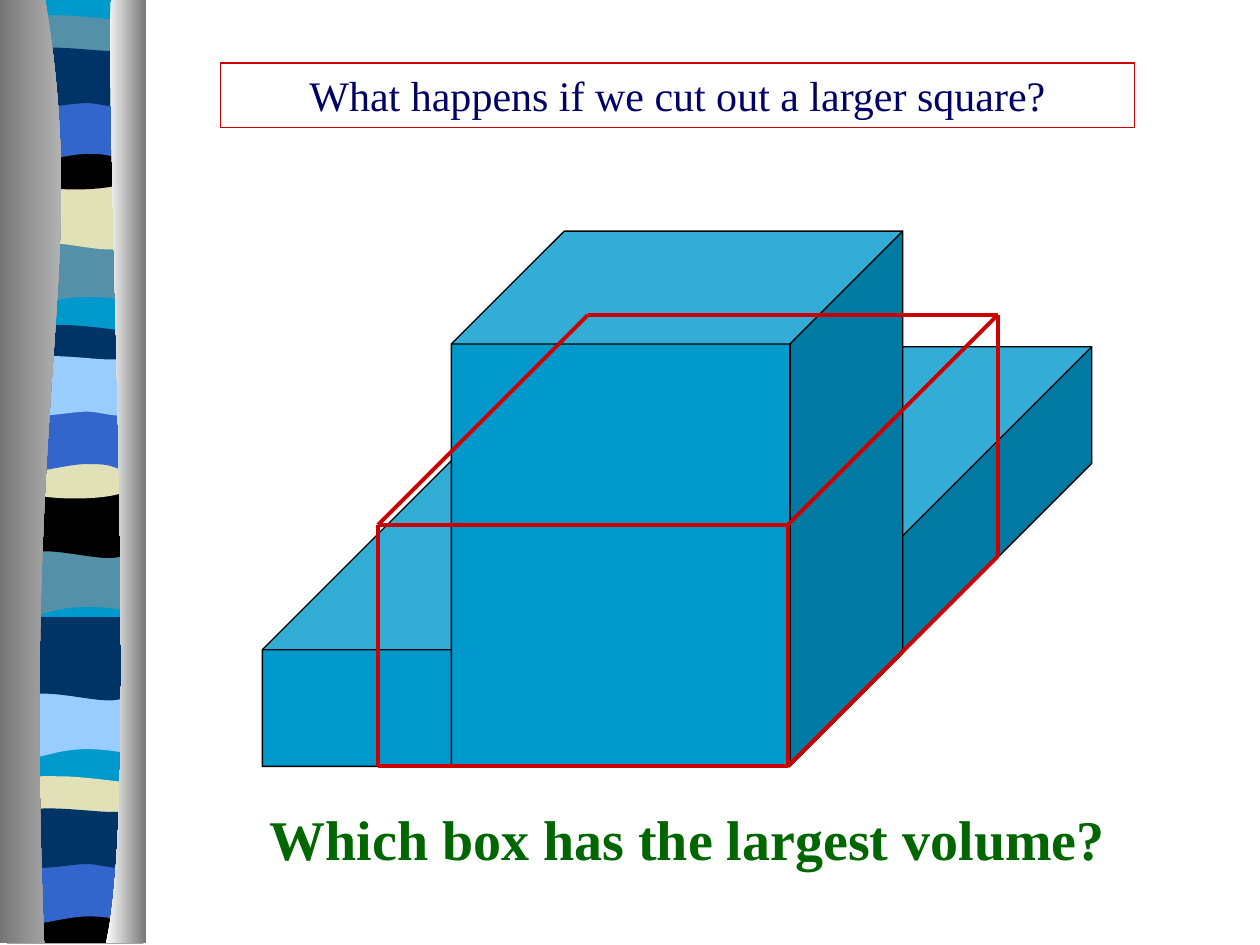
import pptx
import pptx.util
import pptx.dml.color
import pptx.enum.shapes
import pptx.enum.text
import lxml.etree
from pptx.util import Cm

COLORS = {
    "cyan": "0099CC", "steel": "5490A8", "sand": "E1E1B7", "black": "000000",
    "royal": "3366CC", "navy": "003366", "sky": "99CCFF", "grey": "767676",
    "silver": "D0D0D0", "white": "FFFFFF", "red": "CC0000",
    "title": "000066", "question": "006600",
}
FONT = "Times New Roman"

# Outlines in cm: pairs are straight steps, sixes are Bezier curves
BOWL_TOP = (1.68, 0.13, 2.16, 0, 2.75, 0)
WAVES = {
    "dip": [(2.75, 0), (2.75, 1.2), (0.84, 0.99, 0.46, 1.4, 0, 1.2), (0, 0)],
    "swell": [(2.75, 0), (2.75, 1.2), (2.29, 1.4, 0.84, 1.05, 0, 1.2), (0, 0)],
    "lens": [(2.75, 0.12), (2.75, 0.73), (2.29, 0.84, 0.46, 0.84, 0, 0.73),
             (0, 0.12), (0.18, 0, 0.58, 0.03, 1.04, 0.03),
             (1.5, 0.03, 2.39, 0.1, 2.75, 0.12)],
    "bowl": [(2.75, 0), (2.75, 0.82), (2.29, 0.97, 0.46, 0.97, 0, 0.82),
             (0, 0), BOWL_TOP],
    "arch": [(2.75, 0), (2.75, 1.2), (2.31, 1.07, 2.13, 1.07, 1.68, 1.07),
             (1.22, 1.07, 0.41, 1.2, 0, 1.2), (0, 0)],
    "ribbon": [(2.75, 0.12), (2.75, 0.91), (2.57, 1.04, 2.13, 0.91, 1.68, 0.91),
               (1.22, 0.91, 0.28, 1.04, 0, 0.91), (0, 0.12),
               (0.38, 0, 1.85, 0.12, 2.31, 0.12), (2.75, 0.12)],
    "foot": [(2.75, 0), (2.75, 0.94), (0, 0.94), (0, 0), BOWL_TOP],
    "column": [(2.75, 0), (2.75, 18.98), (0, 18.98), (0, 0)],
    "left edge": [(0.91, 0), (1.83, 5.49, 0.43, 7.52, 0.89, 19.02),
                  (0, 19.02), (0, 0)],
    "right edge": [(2.24, 0), (2.13, 3.18, 2.82, 16.41, 2.13, 19.02),
                   (2.95, 19.02), (2.95, 0)],
}
# Wave, top in cm and colour, from back to front
BANDS = [
    ("column", 0, "cyan"),
    ("dip", 4.7, "steel"), ("swell", 3.58, "sand"), ("lens", 0.41, "steel"),
    ("bowl", 2.74, "black"), ("arch", 1.88, "royal"), ("ribbon", 1.04, "navy"),
    ("dip", 10.95, "steel"), ("swell", 9.8, "black"), ("lens", 6.65, "navy"),
    ("bowl", 8.97, "sand"), ("arch", 8.13, "royal"), ("ribbon", 7.26, "sky"),
    ("dip", 13.82, "sky"), ("swell", 12.67, "navy"), ("lens", 15.75, "sand"),
    ("foot", 18.08, "black"), ("arch", 17.25, "royal"), ("ribbon", 16.38, "navy"),
]
UNSTRETCHED = ("column", "foot")


def rgb(name):
    return pptx.dml.color.RGBColor.from_string(COLORS[name])


def add_outline(slide, wave, left, top):
    outline = WAVES[wave]
    points = [(Cm(left + x), Cm(top + y)) for step in outline
              for x, y in zip(step[::2], step[1::2])]
    builder = slide.shapes.build_freeform(*points[0])
    builder.add_line_segments(points[1:], close=True)
    shape = builder.convert_to_shape()
    # Join the three points of each curve into one Bezier segment
    segments = iter(shape.element.findall(".//" + pptx.oxml.ns.qn("a:lnTo")))
    for step in outline[1:]:
        segment = next(segments)
        if len(step) == 6:
            segment.tag = pptx.oxml.ns.qn("a:cubicBezTo")
            for _ in range(2):
                extra = next(segments)
                segment.append(extra[0])
                extra.getparent().remove(extra)
    shape.shadow.inherit = False
    shape.line.fill.background()
    return shape


def stretch(shape, across, down):
    """Scale a shape about its centre."""
    width, height = int(shape.width * across), int(shape.height * down)
    shape.left += (shape.width - width) // 2
    shape.top += (shape.height - height) // 2
    shape.width, shape.height = width, height


def add_pole(slide, left, top):
    """Wavy coloured bands between two shaded edges."""
    for wave, offset, color in BANDS:
        band = add_outline(slide, wave, left + 0.14, top + offset)
        if wave not in UNSTRETCHED:
            stretch(band, 0.75, 1.33)
        band.fill.solid()
        band.fill.fore_color.rgb = rgb(color)
    for wave, first, last in (("left edge", "grey", "silver"),
                              ("right edge", "white", "grey")):
        edge = add_outline(slide, wave, left, top)
        edge.fill.gradient()
        edge.fill.gradient_angle = 0
        for stop, color in zip(edge.fill.gradient_stops, (first, last)):
            stop.color.rgb = rgb(color)


def add_cube(slide, left, top, width, height, depth):
    cube = slide.shapes.add_shape(pptx.enum.shapes.MSO_SHAPE.CUBE,
                                  Cm(left), Cm(top), Cm(width), Cm(height))
    cube.adjustments[0] = depth
    cube.shadow.inherit = False
    cube.fill.solid()
    cube.fill.fore_color.rgb = rgb("cyan")
    cube.line.color.rgb = rgb("black")
    cube.line.width = pptx.util.Pt(0.75)


def add_wire_box(slide, left, top, width, height, depth):
    """Visible edges of a box; its rear face is shifted up and right by depth."""
    right, bottom = left + width, top + height
    corners = {"A": (left, bottom), "B": (right, bottom),
               "C": (right, top), "D": (left, top)}
    corners.update({name.lower(): (x + depth, y - depth)
                    for name, (x, y) in corners.items()})
    for start, end in ("Bb", "AB", "bc", "AD", "BC", "DC", "dc", "Cc", "Dd"):
        ends = [Cm(value) for value in corners[start] + corners[end]]
        edge = slide.shapes.add_connector(
            pptx.enum.shapes.MSO_CONNECTOR.STRAIGHT, *ends)
        edge.line.color.rgb = rgb("red")
        edge.line.width = pptx.util.Pt(2.25)
        lxml.etree.SubElement(edge.element.spPr, pptx.oxml.ns.qn("a:effectLst"))


def set_text(shape, text, size, color, bold, left, top, width, height):
    shape.left, shape.top, shape.width, shape.height = map(
        Cm, (left, top, width, height))
    frame = shape.text_frame
    frame.text = text
    frame.word_wrap = True
    frame.auto_size = pptx.enum.text.MSO_AUTO_SIZE.NONE
    frame.vertical_anchor = pptx.enum.text.MSO_ANCHOR.TOP
    para = frame.paragraphs[0]
    para.alignment = pptx.enum.text.PP_ALIGN.CENTER
    span = para.runs[0]
    span.font.name = FONT
    span.font.size = pptx.util.Pt(size)
    span.font.bold = bold
    span.font.color.rgb = rgb(color)


def main():
    deck = pptx.Presentation()
    deck.slide_width, deck.slide_height = Cm(25.4), Cm(19.05)
    slide = deck.slides.add_slide(deck.slide_layouts[5])

    # Side decoration
    add_pole(slide, 0, 0)

    # Three boxes: flat, tall and outlined
    add_cube(slide, 5.29, 6.99, 16.72, 8.46, 0.722)
    add_cube(slide, 9.1, 4.66, 9.1, 10.79, 0.25)
    add_wire_box(slide, 7.62, 10.58, 8.26, 4.87, 4.23)

    # Framed title and closing question
    title = slide.shapes.title
    set_text(title, "What happens if we cut out a larger square?",
             24, "title", False, 4.45, 1.27, 18.42, 1.3)
    title.line.color.rgb = rgb("red")
    title.line.width = pptx.util.Pt(0.75)
    question = slide.shapes.add_textbox(0, 0, 0, 0)
    set_text(question, "Which box has the largest volume?",
             32, "question", True, 3.81, 16.09, 20.11, 1.6)

    deck.save("out.pptx")


if __name__ == "__main__":
    main()
